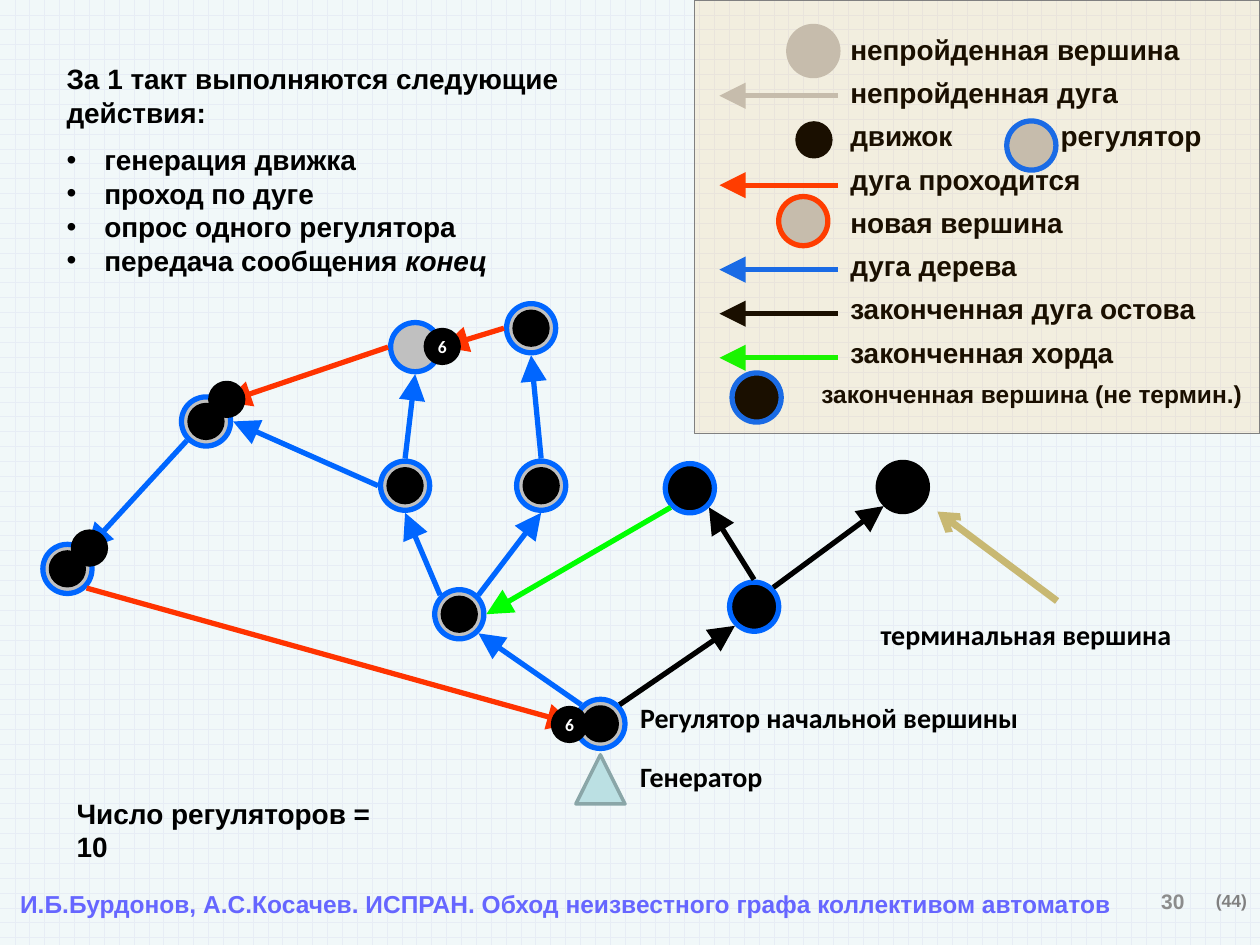
from math import cos, radians, sin

from lxml.etree import SubElement
from pptx import Presentation
from pptx.dml.color import RGBColor
from pptx.enum.dml import MSO_PATTERN
from pptx.enum.shapes import MSO_CONNECTOR, MSO_SHAPE
from pptx.enum.text import MSO_ANCHOR, PP_ALIGN
from pptx.oxml.ns import qn
from pptx.util import Inches, Pt

BLUE, RED, GREEN = "0066FF", "FF3300", "00FF00"
GREY, BLACK, WHITE = "C0C0C0", "000000", "FFFFFF"
NODE, TOKEN, REACH = 0.39, 0.24, 0.215
ANGLES = {"E": 0, "SE": 45, "S": 90, "SW": 135, "W": 180, "NW": 225, "N": 270, "NE": 315}

NODES = {
    "start": (4.57, 5.55, GREY, BLUE),
    "hub": (3.45, 4.68, GREY, BLUE),
    "fork": (5.79, 4.62, BLACK, BLUE),
    "terminal": (6.97, 3.67, BLACK, BLACK),
    "chord": (5.28, 3.68, BLACK, BLUE),
    "left": (3.02, 3.66, GREY, BLUE),
    "right": (4.1, 3.66, GREY, BLUE),
    "upper": (3.1, 2.56, GREY, BLUE),
    "top": (4.02, 2.41, GREY, BLUE),
    "west": (1.44, 3.15, GREY, BLUE),
    "far": (0.34, 4.32, GREY, BLUE),
}
ARCS = [
    ("start", "NW", "hub", "SE", BLUE),
    ("hub", "NW", "left", "S", BLUE),
    ("hub", "NE", "right", "S", BLUE),
    ("left", "W", "west", "E", BLUE),
    ("left", "N", "upper", "S", BLUE),
    ("right", "N", "top", "S", BLUE),
    ("west", "SW", "far", "NE", BLUE),
    ("start", "NE", "fork", "SW", BLACK),
    ("fork", "N", "chord", "SE", BLACK),
    ("fork", "NE", "terminal", "SW", BLACK),
    ("chord", "SW", "hub", "E", GREEN),
    ("upper", "W", "west", "NE", RED),
    ("top", "W", "upper", "E", RED),
    ("far", "SE", "start", "W", RED),
]
RESTING = ["start", "hub", "left", "right", "top", "west", "far"]
MOVING = [(1.68, 3.05, ""), (0.59, 4.23, ""), (3.39, 2.63, "6"), (4.4, 5.63, "6")]
ACTIONS = ["генерация движка", "проход по дуге", "опрос одного регулятора"]
LEGEND = [
    "непройденная вершина", "непройденная дуга", "движок\tрегулятор", "дуга проходится",
    "новая вершина", "дуга дерева", "законченная дуга остова", "законченная хорда",
]
LEGEND_ARCS = [(0.76, GREY), (1.47, RED), (2.14, BLUE), (2.49, BLACK), (2.84, GREEN)]
LEGEND_NODES = [
    (6.26, 0.21, GREY, GREY), (7.99, 0.96, GREY, BLUE),
    (6.18, 1.56, GREY, RED), (5.81, 2.96, BLACK, BLUE),
]


def color(value):
    return RGBColor.from_string(value)


def add_figure(slide, kind, left, top, width, height, fill, line, weight):
    figure = slide.shapes.add_shape(kind, Inches(left), Inches(top), Inches(width), Inches(height))
    figure.shadow.inherit = False
    figure.fill.solid()
    figure.fill.fore_color.rgb = color(fill)
    figure.line.color.rgb = color(line)
    figure.line.width = Pt(weight)
    return figure


def add_node(slide, left, top, fill, ring):
    add_figure(slide, MSO_SHAPE.OVAL, left, top, NODE, NODE, fill, ring, 3)


def add_token(slide, left, top, label=""):
    token = add_figure(slide, MSO_SHAPE.OVAL, left, top, TOKEN, TOKEN, BLACK, BLACK, 4)
    if label:
        set_frame(token.text_frame, inset=False, wrap=False, anchor=MSO_ANCHOR.MIDDLE)
        write(token.text_frame, label, size=10, font="Calibri", ink=WHITE, align=PP_ALIGN.CENTER)


def add_arrow(slide, start, end, ink, weight=3, head="triangle", head_size="lg"):
    ends = [Inches(value) for value in (*start, *end)]
    arrow = slide.shapes.add_connector(MSO_CONNECTOR.STRAIGHT, *ends)
    arrow.line.color.rgb = color(ink)
    arrow.line.width = Pt(weight)
    SubElement(arrow.line._get_or_add_ln(), qn("a:tailEnd"), type=head, w=head_size, len=head_size)
    SubElement(arrow._element.spPr, qn("a:effectLst"))


def site(name, direction):
    left, top = NODES[name][:2]
    angle = radians(ANGLES[direction])
    return left + NODE / 2 + REACH * cos(angle), top + NODE / 2 + REACH * sin(angle)


def set_frame(frame, inset=True, wrap=True, anchor=MSO_ANCHOR.TOP):
    frame.word_wrap = wrap
    frame.vertical_anchor = anchor
    if not inset:
        frame.margin_left = frame.margin_right = frame.margin_top = frame.margin_bottom = 0


def add_box(slide, left, top, width, height, **layout):
    box = slide.shapes.add_textbox(Inches(left), Inches(top), Inches(width), Inches(height))
    set_frame(box.text_frame, **layout)
    return box.text_frame


def write(frame, text, size=16, font="Arial", ink=BLACK, align=PP_ALIGN.LEFT,
          before=0, bullet=False, tab=None, italic_end=""):
    paragraph = frame.paragraphs[0]
    if paragraph.runs:
        paragraph = frame.add_paragraph()
    paragraph.alignment = align
    paragraph.space_before = Pt(before)
    properties = paragraph._p.get_or_add_pPr()
    if bullet:
        properties.set("marL", str(Inches(0.3)))
        properties.set("indent", str(-Inches(0.3)))
        SubElement(properties, qn("a:buFont"), typeface="Arial")
        SubElement(properties, qn("a:buChar"), char="•")
    if tab:
        stops = SubElement(properties, qn("a:tabLst"))
        SubElement(stops, qn("a:tab"), pos=str(Inches(tab)), algn="l")
    for part, italic in ((text, False), (italic_end, True)):
        if part:
            run = paragraph.add_run()
            run.text = part
            run.font.size = Pt(size)
            run.font.name = font
            run.font.bold = True
            run.font.italic = italic
            run.font.color.rgb = color(ink)


def add_graph(slide):
    for node in NODES.values():
        add_node(slide, *node)
    add_figure(slide, MSO_SHAPE.ISOSCELES_TRIANGLE, 4.57, 5.99, NODE, NODE, "BBE0E3", "8AA6A8", 2)
    for source, leaving, target, entering, ink in ARCS:
        add_arrow(slide, site(source, leaving), site(target, entering), ink)
    inset = (NODE - TOKEN) / 2
    for name in RESTING:
        left, top = NODES[name][:2]
        add_token(slide, left + inset, top + inset)
    for token in MOVING:
        add_token(slide, *token)
    for top, width, label in ((6.03, 1.26, "Генератор"), (5.56, 3.07, "Регулятор начальной вершины")):
        write(add_box(slide, 5.08, top, width, 0.27, inset=False), label, font="Calibri")
    write(add_box(slide, 6.89, 4.85, 2.91, 0.37), "терминальная вершина", font="Calibri")
    add_arrow(slide, (8.39, 4.77), (7.44, 4.06), "C8B872", weight=4, head="arrow", head_size="med")


def add_actions(slide):
    actions = add_box(slide, 0.43, 0.44, 4.93, 1.57)
    write(actions, "За 1 такт выполняются следующие действия:")
    for index, action in enumerate(ACTIONS):
        write(actions, action, before=0 if index else 8, bullet=True)
    write(actions, "передача сообщения ", bullet=True, italic_end="конец")


def add_legend(slide):
    for top, ink in LEGEND_ARCS:
        add_arrow(slide, (6.65, top), (5.71, top), ink)
    names = add_box(slide, 6.65, 0.21, 3.07, 2.8)
    for name in LEGEND:
        write(names, name, before=5.5, tab=1.67 if "\t" in name else None)
    for node in LEGEND_NODES:
        add_node(slide, *node)
    add_token(slide, 6.34, 0.99)
    finished = add_box(slide, 5.63, 2.96, 4.33, 0.33)
    write(finished, "законченная вершина (не термин.)", size=14, align=PP_ALIGN.RIGHT)
    panel = add_figure(slide, MSO_SHAPE.RECTANGLE, 5.51, 0, 4.49, 3.44, "FF9900", "808080", 0.75)
    tint = panel._element.spPr.find(qn("a:solidFill")).find(qn("a:srgbClr"))
    SubElement(tint, qn("a:alpha"), val="10000")


def add_footer(slide):
    write(add_box(slide, 0.51, 6.27, 2.76, 0.37), "Число регуляторов = 10")
    number = add_box(slide, 7.17, 6.95, 2.33, 0.4, anchor=MSO_ANCHOR.MIDDLE)
    write(number, "30", size=12, ink="8C8C8C", align=PP_ALIGN.RIGHT)
    credit = add_box(slide, 0.16, 7.06, 8.71, 0.23, inset=False, wrap=False)
    write(credit, "И.Б.Бурдонов, А.С.Косачев. ИСПРАН. Обход неизвестного графа коллективом автоматов",
          size=14, ink="6666FF")
    write(add_box(slide, 9.65, 7.06, 0.25, 0.17, inset=False, wrap=False), "(44)", size=10, ink="808080")


def main():
    deck = Presentation()
    deck.slide_width, deck.slide_height = Inches(10), Inches(7.5)
    slide = deck.slides.add_slide(deck.slide_layouts[6])
    backdrop = slide.background.fill
    backdrop.patterned()
    backdrop.pattern = MSO_PATTERN.HORIZONTAL_BRICK
    backdrop.fore_color.rgb = color("E7EDF5")
    backdrop.back_color.rgb = color("F1F8F9")
    add_graph(slide)
    add_actions(slide)
    add_legend(slide)
    add_footer(slide)
    deck.save("out.pptx")


if __name__ == "__main__":
    main()
